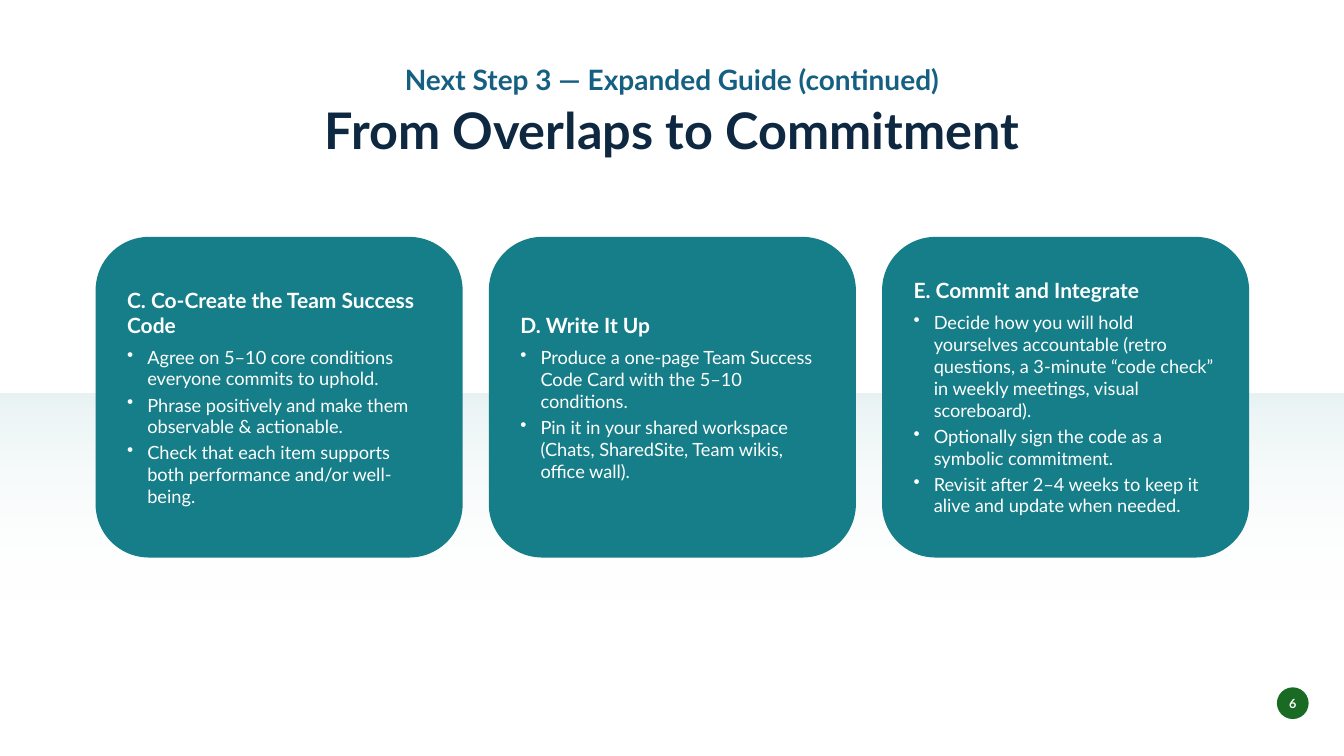
from dataclasses import dataclass

from lxml.etree import SubElement
from pptx import Presentation
from pptx.dml.color import RGBColor
from pptx.enum.shapes import MSO_SHAPE as Preset
from pptx.enum.text import MSO_ANCHOR as Anchor, MSO_AUTO_SIZE as AutoSize, PP_ALIGN as Align
from pptx.oxml.ns import qn
from pptx.util import Cm, Pt


@dataclass(frozen=True)
class Theme:
    font: str = "Lato"
    white: str = "FFFFFF"
    teal: str = "157E88"
    blue: str = "156082"
    navy: str = "0E2841"
    green: str = "196B24"
    kicker: int = 20
    headline: int = 36
    heading: int = 15
    body: int = 13
    number: int = 9


theme = Theme()


def write(paragraph, text, size, color, bold=False):
    paragraph.text = text
    font = paragraph.font
    font.name, font.size, font.bold = theme.font, Pt(size), bold
    font.color.rgb = RGBColor.from_string(color)


def add_panel(preset, left, top, width, height, color, inset=0):
    panel = slide.shapes.add_shape(preset, Cm(left), Cm(top), Cm(width), Cm(height))
    panel.shadow.inherit = False
    panel.line.fill.background()
    panel.fill.solid()
    panel.fill.fore_color.rgb = RGBColor.from_string(color)
    frame = panel.text_frame
    frame.vertical_anchor = Anchor.MIDDLE
    frame.margin_left = frame.margin_right = Cm(inset)
    frame.margin_top = frame.margin_bottom = Cm(inset)
    return panel


deck = Presentation()
deck.slide_width, deck.slide_height = Cm(33.87), Cm(19.05)
slide = deck.slides.add_slide(deck.slide_layouts[5])

band = add_panel(Preset.RECTANGLE, 0, 9.91, 33.87, 5.49, theme.teal)
band.fill.gradient()
band.fill.gradient_angle = 270
fade = [(theme.teal, 0, 10000), (theme.white, 1, 0)]
for stop, (color, position, opacity) in zip(band.fill.gradient_stops, fade):
    stop.color.rgb = RGBColor.from_string(color)
    stop.position = position
for tint, (color, position, opacity) in zip(band.fill._xPr.iter(qn("a:srgbClr")), fade):
    SubElement(tint, qn("a:alpha"), val=str(opacity))

title = slide.shapes.title
title.left, title.top, title.width, title.height = Cm(3.05), Cm(1.45), Cm(27.77), Cm(2.72)
heading = title.text_frame
heading.auto_size = AutoSize.NONE
heading.vertical_anchor = Anchor.TOP
kicker, headline = heading.paragraphs[0], heading.add_paragraph()
write(kicker, "Next Step 3 — Expanded Guide (continued)", theme.kicker, theme.blue, True)
write(headline, "From Overlaps to Commitment", theme.headline, theme.navy, True)
kicker.space_before = kicker.space_after = Pt(2)
kicker.alignment = headline.alignment = Align.CENTER

steps = [
    ("C. Co-Create the Team Success Code", [
        "Agree on 5–10 core conditions everyone commits to uphold.",
        "Phrase positively and make them observable & actionable.",
        "Check that each item supports both performance and/or well-being.",
    ]),
    ("D. Write It Up", [
        "Produce a one-page Team Success Code Card with the 5–10 conditions.",
        "Pin it in your shared workspace (Chats, SharedSite, Team wikis, office wall).",
    ]),
    ("E. Commit and Integrate", [
        "Decide how you will hold yourselves accountable (retro questions, "
        "a 3-minute “code check” in weekly meetings, visual scoreboard).",
        "Optionally sign the code as a symbolic commitment.",
        "Revisit after 2–4 weeks to keep it alive and update when needed.",
    ]),
]
card_width, card_gap = 9.25, 0.66
for column, (step, actions) in enumerate(steps):
    left = 2.41 + column * (card_width + card_gap)
    card = add_panel(Preset.ROUNDED_RECTANGLE, left, 5.97, card_width, 8.08, theme.teal, 0.4)
    step_line = card.text_frame.paragraphs[0]
    write(step_line, step, theme.heading, theme.white, True)
    step_line.alignment = Align.LEFT
    step_line.space_before = step_line.space_after = Pt(3)
    for action in actions:
        action_line = card.text_frame.add_paragraph()
        write(action_line, action, theme.body, theme.white)
        action_line.alignment = Align.LEFT
        action_line.space_before = Pt(3)
        layout = action_line._p.get_or_add_pPr()
        layout.set("marL", str(Cm(0.51)))
        layout.set("indent", str(-Cm(0.51)))
        bullet = layout.makeelement(qn("a:buChar"), {"char": "•"})
        layout.insert_element_before(bullet, "a:tabLst", "a:defRPr", "a:extLst")

badge = add_panel(Preset.OVAL, 32.18, 17.32, 0.8, 0.8, theme.green)
page_number = badge.text_frame.paragraphs[0]
write(page_number, "6", theme.number, theme.white, True)
page_number.alignment = Align.CENTER

deck.save("out.pptx")
